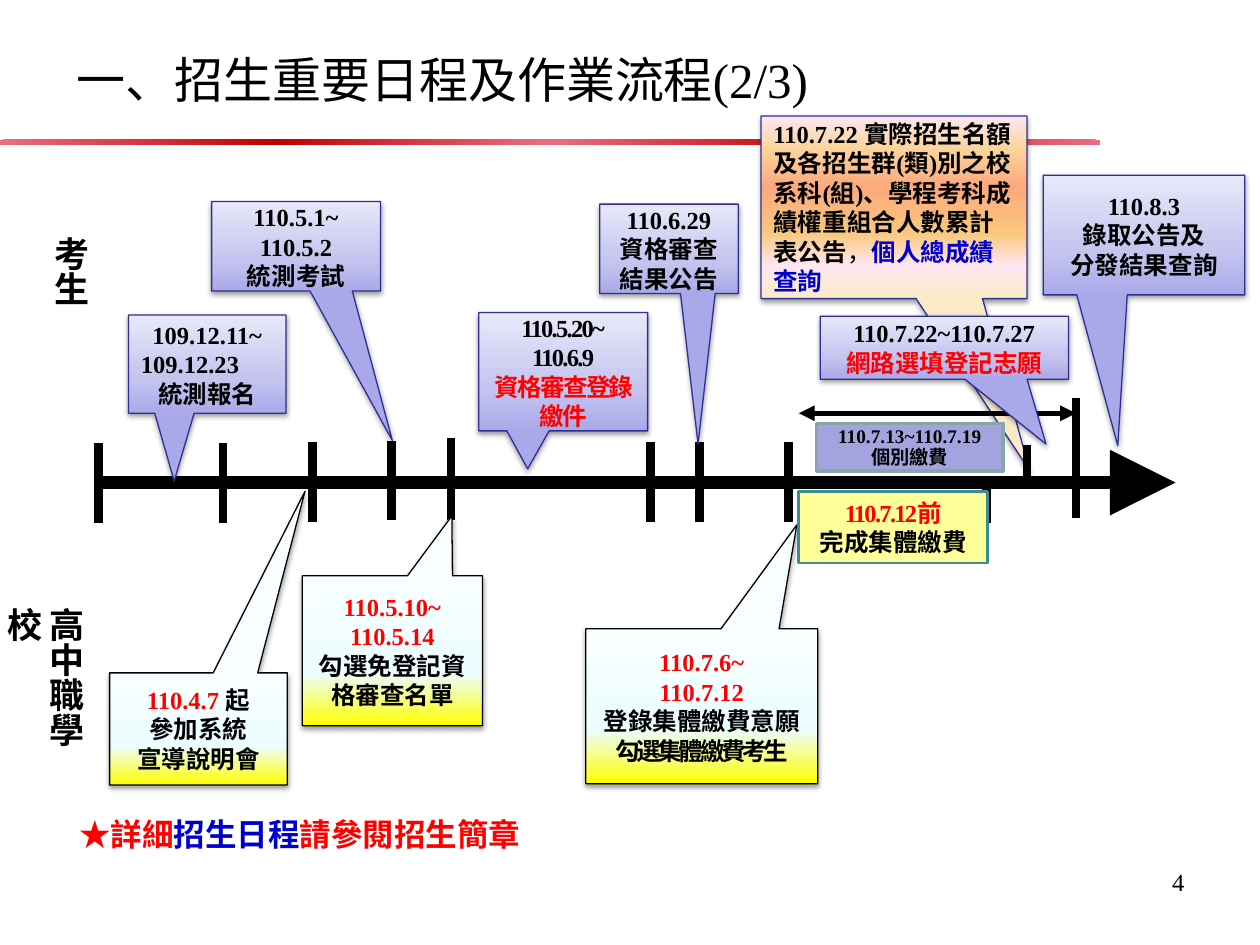
from lxml.etree import SubElement
from pptx import Presentation
from pptx.dml.color import RGBColor
from pptx.enum.shapes import MSO_CONNECTOR, MSO_SHAPE
from pptx.enum.text import MSO_ANCHOR, MSO_AUTO_SIZE, PP_ALIGN
from pptx.oxml.ns import qn
from pptx.util import Inches, Pt

BLACK = RGBColor(0x00, 0x00, 0x00)
RED = RGBColor(0xFF, 0x00, 0x00)
BLUE = RGBColor(0x00, 0x00, 0xCC)
NAVY = RGBColor(0x2F, 0x2F, 0x98)
TEAL = RGBColor(0x3C, 0x8C, 0x93)
GREY_TEAL = RGBColor(0x8A, 0xA6, 0xA8)
PALE_YELLOW = RGBColor(0xFF, 0xFF, 0x99)
LAVENDER = RGBColor(0xA3, 0xA3, 0xE0)

STUDENT_STOPS = [(0, RGBColor(0xA9, 0xA9, 0xE9)), (35, RGBColor(0xC4, 0xC4, 0xEF)),
                 (100, RGBColor(0xE8, 0xE8, 0xFA))]
SCHOOL_STOPS = [(0, RGBColor(0xFF, 0xFF, 0x00)), (35, RGBColor(0xEC, 0xFD, 0xFF)),
                (100, RGBColor(0xF8, 0xFE, 0xFF))]
RESULT_STOPS = [(0, RGBColor(0xFB, 0xEA, 0xC7)), (18, RGBColor(0xFE, 0xE7, 0xF2)),
                (36, RGBColor(0xFA, 0xC7, 0x7D)), (61, RGBColor(0xFB, 0xA9, 0x7D)),
                (82, RGBColor(0xFB, 0xD4, 0x9C)), (100, RGBColor(0xFE, 0xE7, 0xF2))]
BAR_STOPS = [(0, RGBColor(0xEC, 0x6E, 0x82)), (50, RGBColor(0xC0, 0x00, 0x00)),
             (100, RGBColor(0xEC, 0x6E, 0x82))]

CENTER, LEFT, RIGHT = PP_ALIGN.CENTER, PP_ALIGN.LEFT, PP_ALIGN.RIGHT


def line_of(text, color=BLACK, align=CENTER, spacing=0):
    return align, [(text, color, True, spacing)]


class TimelineSlide:
    latin_font = "Times New Roman"
    asian_font = "Noto Sans CJK SC"

    def __init__(self, presentation):
        self.slide = presentation.slides.add_slide(presentation.slide_layouts[5])

    def add_paragraphs(self, shape, paragraphs, size=14, anchor=MSO_ANCHOR.MIDDLE,
                       line_height=None):
        frame = shape.text_frame
        frame.word_wrap = True
        frame.vertical_anchor = anchor
        for index, (align, runs) in enumerate(paragraphs):
            paragraph = frame.add_paragraph() if index else frame.paragraphs[0]
            paragraph.alignment = align
            if line_height:
                paragraph.line_spacing = Pt(line_height)
            for text, color, bold, spacing in runs:
                run = paragraph.add_run()
                run.text = text
                run.font.size = Pt(size)
                run.font.bold = bold
                run.font.color.rgb = color
                run.font.name = self.latin_font
                properties = run.font._element
                SubElement(properties, qn("a:ea"), typeface=self.asian_font)
                if spacing:
                    properties.set("spc", str(spacing * 100))

    def title(self, box, text):
        shape = self.slide.shapes.title
        shape.left, shape.top, shape.width, shape.height = map(Inches, box)
        self.add_paragraphs(shape, [(LEFT, [(text, BLACK, False, 0)])], size=28)

    def gradient(self, shape, stops, radial=False):
        shape.fill.gradient()
        gradient = shape._element.spPr.find(qn("a:gradFill"))
        for child in list(gradient):
            gradient.remove(child)
        stop_list = SubElement(gradient, qn("a:gsLst"))
        for position, color in stops:
            stop = SubElement(stop_list, qn("a:gs"), pos=str(position * 1000))
            SubElement(stop, qn("a:srgbClr"), val=str(color))
        if radial:
            route = SubElement(gradient, qn("a:path"), {"path": "circle"})
            SubElement(route, qn("a:fillToRect"), l="50000", t="50000", r="50000", b="50000")
        else:
            SubElement(gradient, qn("a:lin"), ang="16200000", scaled="0")

    def bar(self, box, stops):
        shape = self.slide.shapes.add_shape(MSO_SHAPE.RECTANGLE, *map(Inches, box))
        shape.shadow.inherit = False
        shape.line.fill.background()
        self.gradient(shape, stops, radial=True)

    def callout(self, box, tip, stops, outline, paragraphs):
        shape = self.slide.shapes.add_shape(MSO_SHAPE.RECTANGULAR_CALLOUT, *map(Inches, box))
        shape.adjustments[0], shape.adjustments[1] = tip
        self.gradient(shape, stops)
        shape.line.color.rgb = outline
        shape.line.width = Pt(0.75)
        shape.shadow.inherit = False
        effects = shape._element.spPr.find(qn("a:effectLst"))
        shadow = SubElement(effects, qn("a:outerShdw"), blurRad=str(Pt(3.1)), dist=str(Pt(1.6)),
                            dir="5400000", rotWithShape="0")
        color = SubElement(shadow, qn("a:srgbClr"), val=str(BLACK))
        SubElement(color, qn("a:alpha"), val="38000")
        self.add_paragraphs(shape, paragraphs)

    def box(self, box, fill, outline, width, paragraphs, **text_style):
        shape = self.slide.shapes.add_shape(MSO_SHAPE.RECTANGLE, *map(Inches, box))
        shape.shadow.inherit = False
        shape.fill.solid()
        shape.fill.fore_color.rgb = fill
        shape.line.color.rgb = outline
        shape.line.width = Pt(width)
        self.add_paragraphs(shape, paragraphs, **text_style)

    def line(self, start, end, width, head=None, tail=None, arrow_size="med"):
        connector = self.slide.shapes.add_connector(
            MSO_CONNECTOR.STRAIGHT, *map(Inches, (*start, *end)))
        connector.line.color.rgb = BLACK
        connector.line.width = Pt(width)
        for tag, kind in (("a:headEnd", head), ("a:tailEnd", tail)):
            if kind:
                SubElement(connector.line._get_or_add_ln(), qn(tag),
                           type=kind, w=arrow_size, len=arrow_size)
        SubElement(connector._element.spPr, qn("a:effectLst"))

    def text(self, box, paragraphs, size):
        shape = self.slide.shapes.add_textbox(*map(Inches, box))
        self.add_paragraphs(shape, paragraphs, size=size, anchor=MSO_ANCHOR.TOP)
        shape.text_frame.auto_size = MSO_AUTO_SIZE.NONE
        return shape

    def vertical_text(self, box, text, bottom_margin):
        shape = self.text(box, [line_of(text, align=LEFT)], 20)
        shape.text_frame.margin_top = Inches(0.08)
        shape.text_frame.margin_bottom = Inches(bottom_margin)
        shape.text_frame._txBody.bodyPr.set("vert", "eaVert")


def main():
    presentation = Presentation()
    presentation.slide_width, presentation.slide_height = Inches(10), Inches(7.5)
    timeline = TimelineSlide(presentation)

    timeline.bar((-0.01, 1.11, 8.74, 0.04), BAR_STOPS)
    timeline.title((0.51, 0.28, 8.73, 0.69), "一、招生重要日程及作業流程(2/3)")

    timeline.callout((6.04, 0.92, 2.11, 1.45), (0.51, 1.44), RESULT_STOPS, NAVY, [(LEFT, [
        ("110.7.22 實際招生名額及各招生群(類)別之校系科(組)、學程考科成績權重組合人數累計表公告",
         BLACK, True, 0),
        ("，", BLACK, False, 0),
        ("個人總成績查詢", BLUE, True, 0)])])

    timeline.line((0.78, 3.83), (9.33, 3.83), 7.5, tail="triangle", arrow_size="lg")
    ticks = [(0.78, 3.52, 4.15), (1.77, 3.52, 4.15), (2.48, 3.51, 4.14), (3.11, 3.5, 4.13),
             (3.58, 3.48, 4.13), (5.16, 3.51, 4.14), (5.55, 3.51, 4.14), (6.26, 3.51, 4.14),
             (7.83, 3.85, 4.15), (8.15, 3.53, 3.84), (8.54, 3.16, 4.11)]
    for x, top, bottom in ticks:
        timeline.line((x, top), (x, bottom), 5)
    timeline.line((6.34, 3.28), (8.54, 3.28), 3, head="triangle", tail="triangle")

    student_events = [
        ((1.02, 2.5, 1.25, 0.78), (-0.21, 1.19),
         [line_of("109.12.11~"), line_of("109.12.23", align=LEFT), line_of("統測報名")]),
        ((1.68, 1.6, 1.34, 0.71), (0.57, 2.17),
         [line_of("110.5.1~"), line_of("110.5.2"), line_of("統測考試")]),
        ((3.8, 2.48, 1.34, 0.94), (-0.21, 0.82),
         [line_of("110.5.20~", spacing=-1), line_of("110.6.9", spacing=-1),
          line_of("資格審查登錄繳件", RED, spacing=-1)]),
        ((4.76, 1.62, 1.1, 0.71), (0.21, 2.18),
         [line_of("110.6.29"), line_of("資格審查"), line_of("結果公告")]),
        ((6.51, 2.51, 1.97, 0.5), (0.41, 1.53),
         [line_of("110.7.22~110.7.27"), line_of("網路選填登記志願", RED)]),
        ((8.28, 1.39, 1.6, 0.95), (-0.13, 1.76),
         [line_of("110.8.3"), line_of("錄取公告及"), line_of("分發結果查詢")]),
    ]
    school_events = [
        ((0.87, 5.34, 1.41, 0.89), (0.6, -2.12),
         [(CENTER, [("110.4.7 ", RED, True, 0), ("起", BLACK, True, 0)]),
          line_of("參加系統"), line_of("宣導說明會")]),
        ((2.4, 4.57, 1.43, 1.19), (0.33, -0.9),
         [line_of("110.5.10~", RED), line_of("110.5.14", RED),
          line_of("勾選免登記資格審查名單")]),
        ((4.65, 4.99, 1.84, 1.23), (0.41, -1.17),
         [line_of("110.7.6~", RED), line_of("110.7.12", RED),
          line_of("登錄集體繳費意願"), line_of("勾選集體繳費考生", spacing=-2)]),
    ]
    for events, stops, outline in ((student_events, STUDENT_STOPS, NAVY),
                                   (school_events, SCHOOL_STOPS, BLACK)):
        for box, tip, paragraphs in events:
            timeline.callout(box, tip, stops, outline, paragraphs)

    timeline.box((6.34, 3.9, 1.5, 0.57), PALE_YELLOW, TEAL, 1.5,
                 [line_of("110.7.12前", RED, spacing=-1), line_of("完成集體繳費")],
                 anchor=MSO_ANCHOR.TOP)
    timeline.box((6.48, 3.36, 1.48, 0.38), LAVENDER, GREY_TEAL, 2,
                 [line_of("110.7.13~110.7.19"), line_of("個別繳費")],
                 size=11, line_height=12)

    timeline.vertical_text((0.24, 1.8, 0.54, 1.02), "考生", 0.05)
    timeline.vertical_text((0.2, 4.74, 0.54, 1.58), "高中職學校", 0.25)
    timeline.text((0.53, 6.42, 3.9, 0.4), [(LEFT, [
        ("★詳細", RED, True, 0), ("招生日程", BLUE, True, 0),
        ("請參閱招生簡章", RED, True, 0)])], 18)
    timeline.text((7.17, 6.83, 2.33, 0.52), [(RIGHT, [("4", BLACK, False, 0)])], 14)

    presentation.save("out.pptx")


if __name__ == "__main__":
    main()
